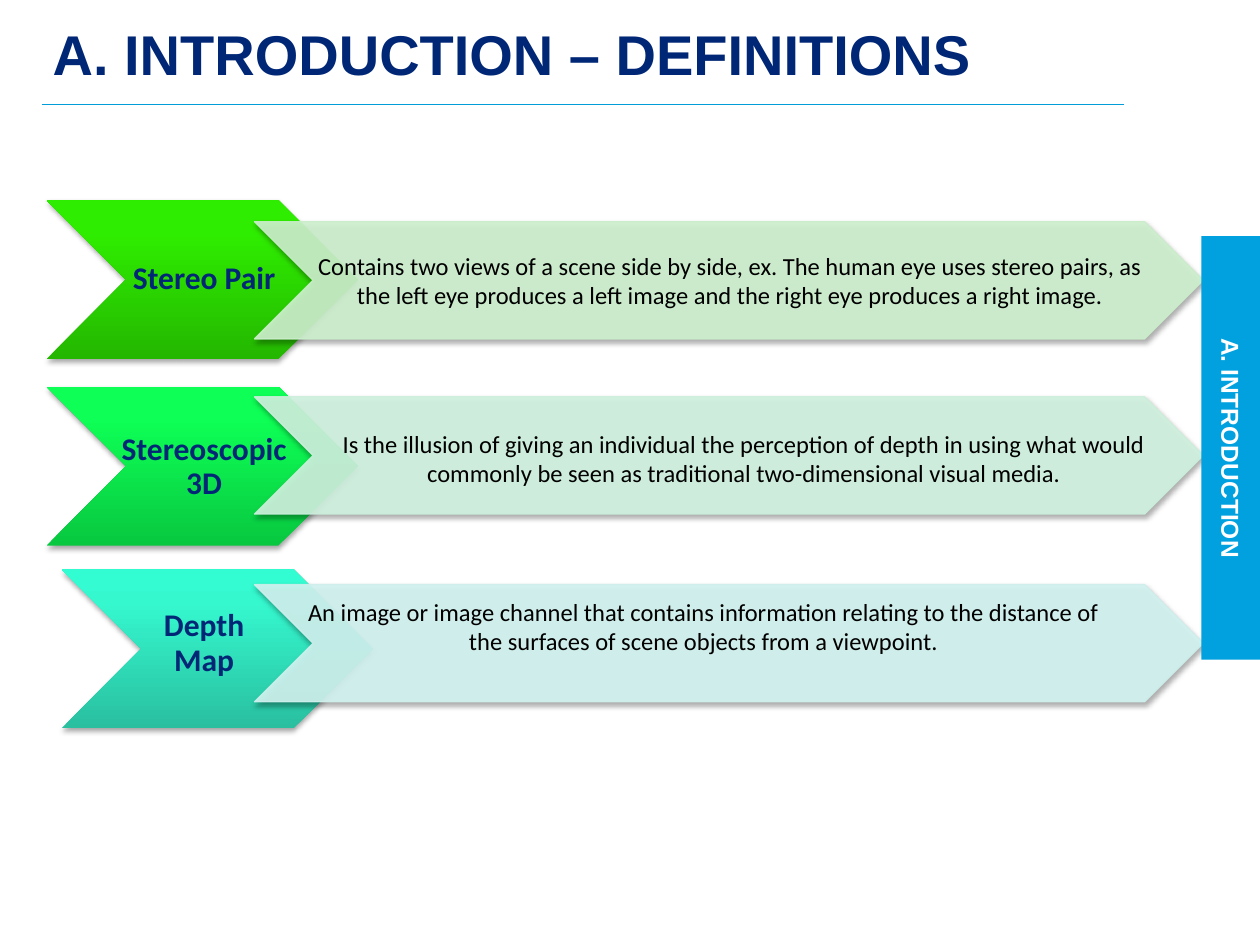
import pptx
import pptx.dml.color
import pptx.enum.shapes
import pptx.enum.text
import pptx.oxml
import pptx.oxml.ns
import pptx.util

COLUMNS, ROWS = 100, 75
CELL = pptx.util.Inches(0.1)
COLORS = {"navy": "002776", "black": "000000", "white": "FFFFFF", "tab": "00A1DE", "rule": "009DD9"}
SHAPES = pptx.enum.shapes.MSO_SHAPE
CENTER = pptx.enum.text.PP_ALIGN.CENTER
LEFT = pptx.enum.text.PP_ALIGN.LEFT
LABEL_INSETS = (0.02, 0.01, 0, 0.01)
BODY_INSETS = (0.01, 0, 0, 0)
BOX_INSETS = (0.1, 0.05, 0.1, 0.05)

DEFINITIONS = [
    {
        "label": "Stereo Pair",
        "text": "Contains two views of a scene side by side, ex. The human eye uses stereo pairs, "
                "as the left eye produces a left image and the right eye produces a right image.",
        "gradient": ("24B700", "2FED00", "2FEE00"), "fill": "CFF1CF", "line": "CAEDCA",
        "head": (3.7, 15.9), "band_row": 17.6,
        "label_box": (8.7, 15.9, 14.8, 12.6), "text_box": (24.3, 17.6, 67.2, 9.3),
    },
    {
        "label": "Stereoscopic 3D",
        "text": "Is the illusion of giving an individual the perception of depth in using what would "
                "commonly be seen as traditional two-dimensional visual media.",
        "gradient": ("08C840", "0EFF55", "10FF56"), "fill": "D1F3E0", "line": "CCEEDB",
        "head": (3.7, 30.7), "band_row": 31.5,
        "label_box": (8.7, 30.7, 14.8, 12.8), "text_box": (24.9, 30.8, 68.2, 11.1),
    },
    {
        "label": "Depth Map",
        "text": "An image or image channel that contains information relating to the distance of "
                "the surfaces of scene objects from a viewpoint.",
        "gradient": ("29BF9F", "35F8CF", "32FDD2"), "fill": "D3F4F1", "line": "CEEFEC",
        "head": (4.9, 45.2), "band_row": 46.4,
        "label_box": (12.5, 47.1, 7.2, 8), "text_box": (24.1, 46.4, 63.4, 6.6),
    },
]


def cells(*counts):
    """Turn counts of grid cells into lengths."""
    return [int(count * CELL) for count in counts]


def rgb(value):
    """Return the colour of a hex string."""
    return pptx.dml.color.RGBColor.from_string(value)


def xml(tag, content):
    """Parse one drawing element with the given content."""
    namespace = pptx.oxml.ns.nsdecls("a")
    return pptx.oxml.parse_xml(f"<a:{tag} {namespace}>{content}</a:{tag}>")


def write(shape, text, size, font, color, insets, alignment=CENTER, bold=True, spacing=1.0):
    """Put one formatted, vertically centred paragraph in a shape."""
    frame = shape.text_frame
    frame.word_wrap = True
    frame.vertical_anchor = pptx.enum.text.MSO_ANCHOR.MIDDLE
    frame.margin_left, frame.margin_top, frame.margin_right, frame.margin_bottom = (
        pptx.util.Inches(inset) for inset in insets)
    frame.text = text
    paragraph = frame.paragraphs[0]
    paragraph.alignment = alignment
    paragraph.line_spacing = spacing
    run_font = paragraph.runs[0].font
    run_font.name, run_font.size, run_font.bold = font, pptx.util.Pt(size), bold
    run_font.color.rgb = rgb(COLORS[color])


def add_text(slide, box, *arguments, **options):
    """Add a text box on the grid."""
    write(slide.shapes.add_textbox(*cells(*box)), *arguments, **options)


def add_chevron(slide, box):
    """Add a chevron with a soft shadow below it."""
    shape = slide.shapes.add_shape(SHAPES.CHEVRON, *cells(*box))
    shape.shadow.inherit = False
    effects = shape._element.spPr.find(pptx.oxml.ns.qn("a:effectLst"))
    shadow = xml("outerShdw", '<a:srgbClr val="000000"><a:alpha val="35000"/></a:srgbClr>')
    for name, value in (("blurRad", 40000), ("dist", 23000), ("dir", 5400000), ("rotWithShape", 0)):
        shadow.set(name, str(value))
    effects.append(shadow)
    return shape


def add_head(slide, box, gradient):
    """Add a chevron shaded from its bottom to its top."""
    shape = add_chevron(slide, box)
    shape.line.fill.background()
    shape.fill.gradient()
    fill = shape._element.spPr.find(pptx.oxml.ns.qn("a:gradFill"))
    stops = "".join(f'<a:gs pos="{position}"><a:srgbClr val="{color}"/></a:gs>'
                    for position, color in zip((0, 80000, 100000), gradient))
    content = f'<a:gsLst>{stops}</a:gsLst><a:lin ang="16200000" scaled="0"/>'
    fill.getparent().replace(fill, xml("gradFill", content))


def add_band(slide, box, fill, line):
    """Add a pale, slightly transparent chevron with a thin outline."""
    shape = add_chevron(slide, box)
    shape.fill.solid()
    shape.fill.fore_color.rgb = rgb(fill)
    shape.line.color.rgb = rgb(line)
    shape.line.width = pptx.util.Pt(0.75)
    for color in shape._element.spPr.findall(".//" + pptx.oxml.ns.qn("a:srgbClr")):
        if color.get("val") in (fill, line):
            alpha = xml("alpha", "")
            alpha.set("val", "90000")
            color.append(alpha)


def add_definition(slide, item):
    """Add a labelled head and the band that explains it."""
    add_head(slide, (*item["head"], 24.7, 12.6), item["gradient"])
    add_text(slide, item["label_box"], item["label"], 18, "Calibri", "navy", LABEL_INSETS, spacing=0.9)
    add_band(slide, (20.2, item["band_row"], 75.3, 9.3), item["fill"], item["line"])
    add_text(slide, item["text_box"], item["text"], 14, "Calibri", "black", BODY_INSETS, bold=False)


def add_side_tab(slide, text):
    """Add the section tab turned along the right edge."""
    shape = slide.shapes.add_shape(SHAPES.RECTANGLE, *cells(80.9, 33.2, 33.6, 4.7))
    shape.rotation = 90
    shape.shadow.inherit = False
    shape.fill.solid()
    shape.fill.fore_color.rgb = rgb(COLORS["tab"])
    shape.line.fill.background()
    write(shape, text, 14, "Arial", "white", BOX_INSETS)


def add_rule(slide, start, end, row):
    """Add a thin horizontal line."""
    line = slide.shapes.add_connector(
        pptx.enum.shapes.MSO_CONNECTOR.STRAIGHT, *cells(start, row, end, row))
    line.line.color.rgb = rgb(COLORS["rule"])
    line.line.width = pptx.util.Pt(0.75)
    line._element.spPr.append(xml("effectLst", ""))


def main():
    """Build and save the slide."""
    presentation = pptx.Presentation()
    presentation.slide_width, presentation.slide_height = cells(COLUMNS, ROWS)
    slide = presentation.slides.add_slide(presentation.slide_layouts[6])
    for item in DEFINITIONS:
        add_definition(slide, item)
    add_side_tab(slide, "A. INTRODUCTION")
    add_text(slide, (3.2, -0.4, 95.1, 9.2), "A. INTRODUCTION – DEFINITIONS",
             32, "Arial", "navy", BOX_INSETS, alignment=LEFT)
    add_rule(slide, 3.3, 89.2, 8.3)
    presentation.save("out.pptx")


if __name__ == "__main__":
    main()
